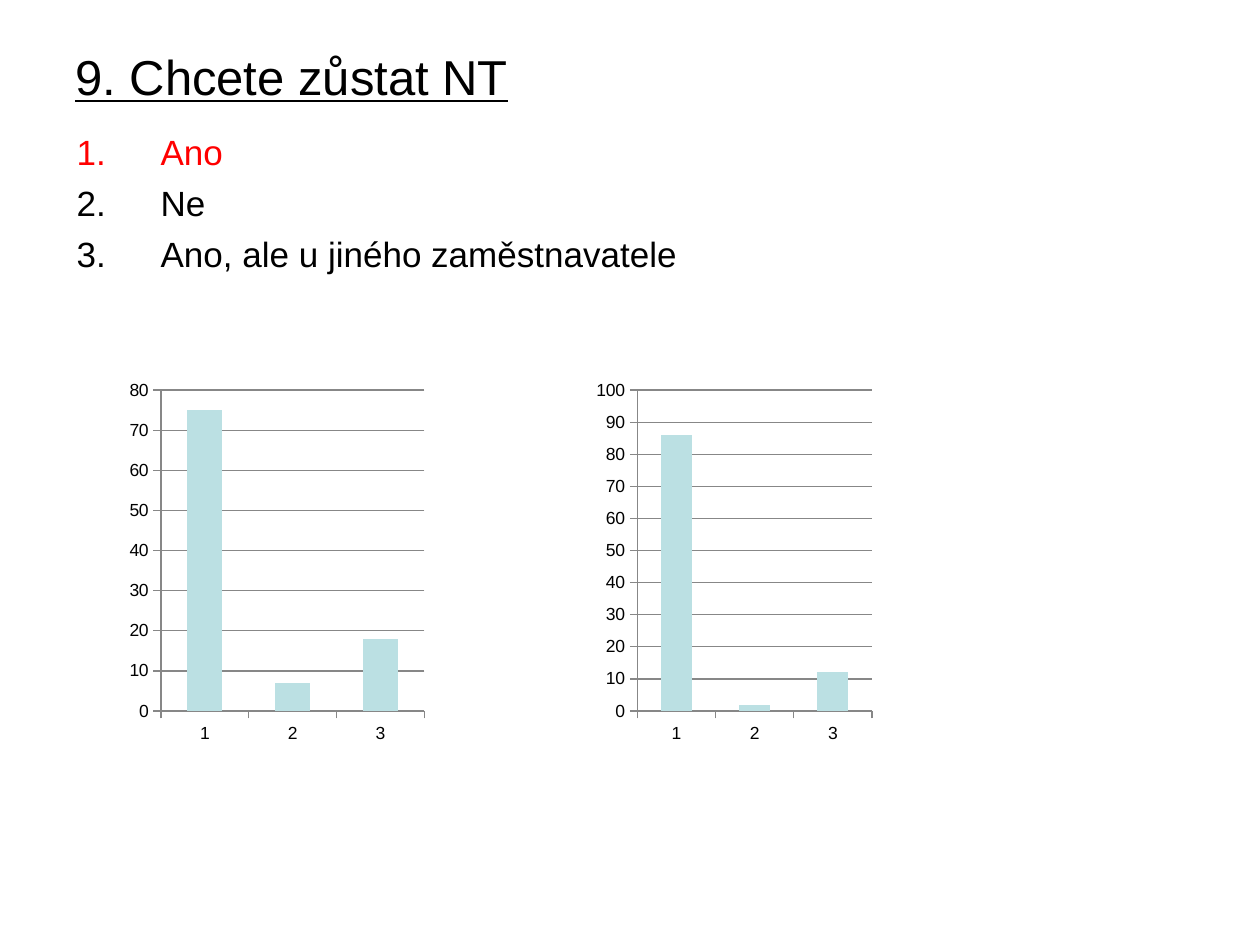
from lxml import etree
from pptx import Presentation
from pptx.chart.data import CategoryChartData
from pptx.dml.color import RGBColor
from pptx.enum.chart import XL_CHART_TYPE, XL_TICK_MARK
from pptx.enum.text import MSO_ANCHOR
from pptx.oxml.ns import qn
from pptx.util import Pt

FONT = "Arial"
BLACK, RED, GRAY, AQUA = "000000", "FF0000", "878787", "BBE0E3"
ANSWERS = [("Ano", RED), ("Ne", BLACK), ("Ano, ale u jiného zaměstnavatele", BLACK)]
# Left, width, values, axis maximum
RESULTS = [(70.5, 175.5, (75, 7, 18), 80), (337.5, 164, (86, 2, 12), 100)]


def color(hex_value):
    return RGBColor.from_string(hex_value)


def style_font(font, size, hex_value):
    font.name = FONT
    font.size = Pt(size)
    font.color.rgb = color(hex_value)


def add_text_frame(slide, left, top, width, height):
    box = slide.shapes.add_textbox(Pt(left), Pt(top), Pt(width), Pt(height))
    box.text_frame.word_wrap = True
    return box.text_frame


def add_question(slide, wording):
    frame = add_text_frame(slide, 36, 21.6, 648, 44)
    frame.vertical_anchor = MSO_ANCHOR.MIDDLE
    frame.text = wording
    font = frame.paragraphs[0].runs[0].font
    style_font(font, 28, BLACK)
    font.underline = True


def number_paragraph(paragraph, indent):
    properties = paragraph._p.get_or_add_pPr()
    properties.set("marL", str(Pt(indent)))
    properties.set("indent", str(-Pt(indent)))
    etree.SubElement(properties, qn("a:buFont"), typeface=FONT)
    etree.SubElement(properties, qn("a:buAutoNum"), type="arabicPeriod")


def add_answers(slide, answers):
    frame = add_text_frame(slide, 36.7, 71.3, 425.5, 96.5)
    frame.text = "\n".join(wording for wording, _ in answers)
    for paragraph, (_, hex_value) in zip(frame.paragraphs, answers):
        paragraph.space_before = Pt(5)
        number_paragraph(paragraph, 48)
        style_font(paragraph.runs[0].font, 20, hex_value)


def add_result_chart(slide, left, width, values, maximum):
    data = CategoryChartData()
    data.categories = ["1", "2", "3"]
    data.add_series("Series 1", values)
    chart = slide.shapes.add_chart(
        XL_CHART_TYPE.COLUMN_CLUSTERED, Pt(left), Pt(213), Pt(width), Pt(216), data
    ).chart
    chart.has_legend = False
    chart.has_title = False
    style_font(chart.font, 10, BLACK)

    # Columns
    plot = chart.plots[0]
    plot.gap_width = 150
    plot.vary_by_categories = False
    columns = plot.series[0].format.fill
    columns.solid()
    columns.fore_color.rgb = color(AQUA)

    # Axes and gridlines
    scale = chart.value_axis
    scale.minimum_scale, scale.maximum_scale, scale.major_unit = 0, maximum, 10
    scale.has_major_gridlines = True
    for axis in (chart.category_axis, scale):
        axis.major_tick_mark = XL_TICK_MARK.OUTSIDE
        axis.minor_tick_mark = XL_TICK_MARK.NONE
    for lined in (chart.category_axis, scale, scale.major_gridlines):
        lined.format.line.color.rgb = color(GRAY)
        lined.format.line.width = Pt(0.75)


def main():
    presentation = Presentation()
    presentation.slide_width, presentation.slide_height = Pt(720), Pt(540)
    slide = presentation.slides.add_slide(presentation.slide_layouts[6])

    # Question and its possible answers
    add_question(slide, "9. Chcete zůstat NT")
    add_answers(slide, ANSWERS)

    # Results of the two groups
    for left, width, values, maximum in RESULTS:
        add_result_chart(slide, left, width, values, maximum)

    presentation.save("out.pptx")


if __name__ == "__main__":
    main()
